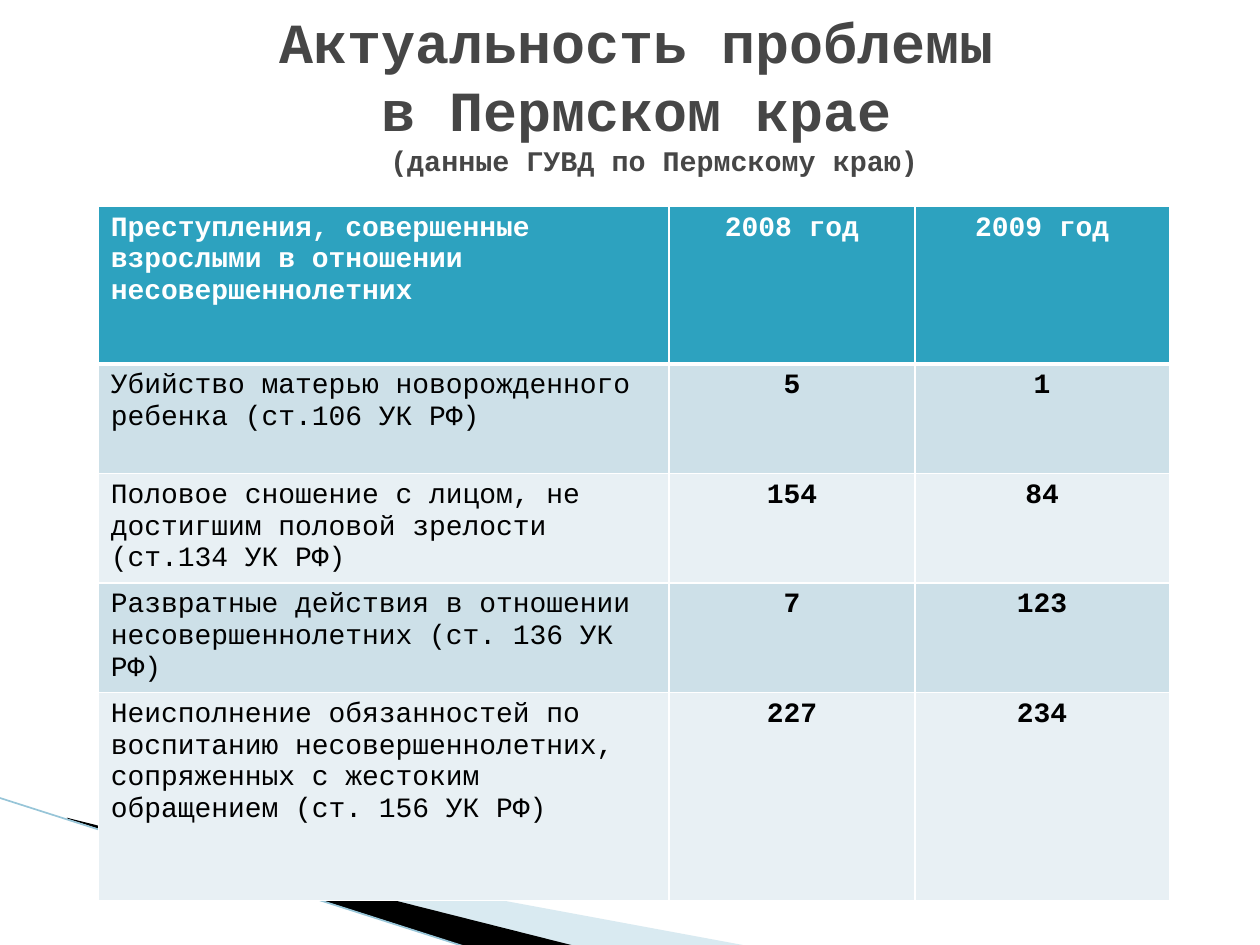
import pptx
import pptx.util
import pptx.dml.color
import pptx.enum.text
import pptx.oxml.ns
import lxml.etree

Pt = pptx.util.Pt
RGB = pptx.dml.color.RGBColor.from_string
qn = pptx.oxml.ns.qn
ALIGN = pptx.enum.text.PP_ALIGN
HUES = {"white": "FFFFFF", "black": "000000", "head": "2DA2BF", "odd": "CDE0E8",
        "even": "E8F0F4", "title": "464646", "wave": "A0CBDC", "line": "97C5D8"}


def node(up, tag, **vals):
    return lxml.etree.SubElement(up, qn(tag), **vals)


class Deck:
    def __init__(self):
        self.show = pptx.Presentation()
        self.show.slide_width, self.show.slide_height = Pt(720), Pt(540)
        self.slide = self.show.slides.add_slide(self.show.slide_layouts[5])
        self.font = {"name": "Courier New", "size": Pt(16)}

    def style(self, run, hue, **vals):
        for key, val in {**self.font, **vals}.items():
            setattr(run.font, key, val)
        run.font.color.rgb = RGB(HUES[hue])

    def title(self, box, lines):
        shape = self.slide.shapes.title
        shape.left, shape.top, shape.width, shape.height = map(Pt, box)
        frame = shape.text_frame
        for key, val in {"word_wrap": True,
                         "auto_size": pptx.enum.text.MSO_AUTO_SIZE.NONE,
                         "vertical_anchor": pptx.enum.text.MSO_ANCHOR.MIDDLE}.items():
            setattr(frame, key, val)
        para = frame.paragraphs[0]
        para.alignment = ALIGN.CENTER
        for num, (text, size) in enumerate(lines):
            if num:
                para.add_line_break()
                node(para._p[-1], "a:rPr", sz=str(int(lines[num - 1][1] * 100)))
            run = para.add_run()
            run.text = text
            self.style(run, "title", size=Pt(size), bold=True)

    def shard(self, dots, hue, alpha=100):
        dots = [(Pt(x), Pt(y)) for x, y in dots]
        pen = self.slide.shapes.build_freeform(*dots[0], scale=1.0)
        pen.add_line_segments(dots[1:], close=True)
        shape = pen.convert_to_shape()
        shape.shadow.inherit = False
        shape.line.fill.background()
        shape.fill.solid()
        shape.fill.fore_color.rgb = RGB(HUES[hue])
        if alpha < 100:
            tint = next(shape._element.spPr.iter(qn("a:srgbClr")))
            node(tint, "a:alpha", val=str(alpha * 1000))

    def rule(self, ends, hue, width):
        line = self.slide.shapes.add_connector(1, *map(Pt, ends))
        line.line.color.rgb = RGB(HUES[hue])
        line.line.width = Pt(width)
        node(line._element.spPr, "a:effectLst")

    def edge(self, cell, widths):
        props = cell._tc.get_or_add_tcPr()
        for side, width in zip("LRTB", widths):
            line = node(props, "a:ln" + side, w=str(Pt(width)))
            node(node(line, "a:solidFill"), "a:srgbClr", val=HUES["white"])

    def cell(self, cell, text, row, col):
        self.edge(cell, (1, 1, 3 if row == 1 else 1, 3 if row == 0 else 1))
        cell.fill.solid()
        fill = "head" if row == 0 else ("even", "odd")[row % 2]
        cell.fill.fore_color.rgb = RGB(HUES[fill])
        cell.text_frame.text = text
        for para in cell.text_frame.paragraphs:
            para.alignment = ALIGN.CENTER if col else ALIGN.LEFT
            for run in para.runs:
                self.style(run, "black" if row else "white", bold=row == 0 or col > 0)

    def table(self, left, top, wide, high, data):
        box = map(Pt, (left, top, sum(wide), sum(high)))
        table = self.slide.shapes.add_table(len(high), len(wide), *box).table
        for col, size in zip(table.columns, wide):
            col.width = Pt(size)
        for row, size in zip(table.rows, high):
            row.height = Pt(size)
        for row, texts in enumerate(data):
            for col, text in enumerate(texts):
                self.cell(table.cell(row, col), text, row, col)


def main():
    deck = Deck()
    deck.shard([(39.6, 468.7), (428.4, 540.7), (328.3, 540.7), (39.6, 468)], "wave", 40)
    deck.shard([(38.2, 467.3), (329, 540.7), (267.8, 541.4), (38.9, 468)], "black")
    deck.rule((-0.7, 455.8, 267.1, 541.4), "line", 0.95)
    deck.table(56.2, 118.1, (326.2, 140.4, 145.4), (90, 62.6, 62.6, 62.6, 118.8), [
        ("Преступления, совершенные взрослыми в отношении несовершеннолетних",
         "2008 год", "2009 год"),
        ("Убийство матерью новорожденного ребенка (ст.106 УК РФ)", "5", "1"),
        ("Половое сношение с лицом, не достигшим половой зрелости\n(ст.134 УК РФ)",
         "154", "84"),
        ("Развратные действия в отношении несовершеннолетних (ст. 136 УК РФ)",
         "7", "123"),
        ("Неисполнение обязанностей по воспитанию несовершеннолетних, "
         "сопряженных с жестоким обращением (ст. 156 УК РФ)", "227", "234")])
    deck.title((67.7, 16.6, 612, 72), [
        ("Актуальность проблемы ", 32.4), ("в Пермском крае ", 32.4),
        ("(данные ГУВД по Пермскому краю)", 16.2)])
    deck.show.save("out.pptx")


if __name__ == "__main__":
    main()
